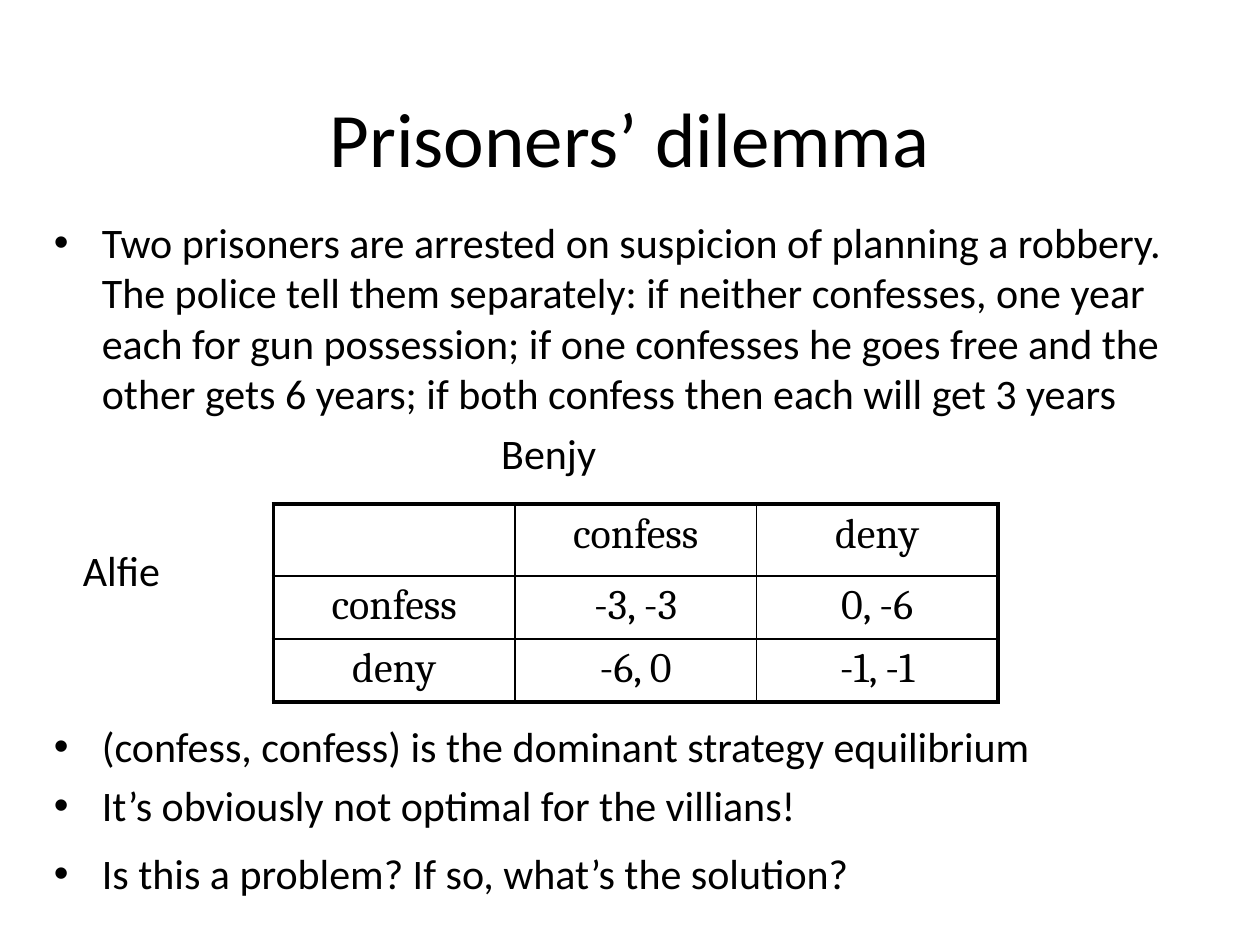
from lxml.etree import SubElement
from pptx import Presentation
from pptx.dml.color import RGBColor
from pptx.enum.text import MSO_ANCHOR, PP_ALIGN
from pptx.oxml.ns import qn
from pptx.util import Inches, Pt

BLACK, WHITE = "000000", "FFFFFF"
OUTER_BORDER, INNER_BORDER = 2.25, 1
TEXT_SIZE = 24

INTRODUCTION = [
    "Two prisoners are arrested on suspicion of planning a robbery. "
    "The police tell them separately: if neither confesses, one year "
    "each for gun possession; if one confesses he goes free and the "
    "other gets 6 years; if both confess then each will get 3 years",
]
CONCLUSIONS = [
    "(confess, confess) is the dominant strategy equilibrium",
    "It’s obviously not optimal for the villians!",
    "Is this a problem? If so, what’s the solution?",
]
PAYOFFS = [
    ["", "confess", "deny"],
    ["confess", "-3, -3", "0, -6"],
    ["deny", "-6, 0", "-1, -1"],
]


def color(hex_string):
    return RGBColor.from_string(hex_string)


def style_paragraph(paragraph, size=TEXT_SIZE, name="Calibri", align=PP_ALIGN.LEFT):
    paragraph.alignment = align
    paragraph.font.size = Pt(size)
    paragraph.font.name = name
    paragraph.font.color.rgb = color(BLACK)


def add_text(slide, lines, left, top, width, height, **style):
    shape = slide.shapes.add_textbox(
        Inches(left), Inches(top), Inches(width), Inches(height))
    frame = shape.text_frame
    frame.word_wrap = True
    frame.text = "\n".join(lines)
    for paragraph in frame.paragraphs:
        style_paragraph(paragraph, **style)
    return frame


def add_bullets(slide, lines, left, top, width, height):
    frame = add_text(slide, lines, left, top, width, height)
    for paragraph in frame.paragraphs:
        paragraph.space_before = Pt(4.8)
        properties = paragraph._p.get_or_add_pPr()
        properties.set("marL", str(Inches(0.38)))
        properties.set("indent", str(Inches(-0.38)))
        SubElement(properties, qn("a:buFont"), typeface="Arial")
        SubElement(properties, qn("a:buChar"), char="•")
    return frame


def set_borders(cell, widths):
    properties = cell._tc.get_or_add_tcPr()
    for side, width in zip("LRTB", widths):
        line = SubElement(properties, qn(f"a:ln{side}"), w=str(Pt(width)))
        fill = SubElement(line, qn("a:solidFill"))
        SubElement(fill, qn("a:srgbClr"), val=BLACK)


def add_payoff_table(slide, rows, left, top, width, row_heights):
    row_count, column_count = len(rows), len(rows[0])
    table = slide.shapes.add_table(
        row_count, column_count, Inches(left), Inches(top),
        Inches(width), Inches(sum(row_heights))).table
    table.first_row = table.horz_banding = False
    for row, height in zip(table.rows, row_heights):
        row.height = Inches(height)
    for i, values in enumerate(rows):
        for j, value in enumerate(values):
            cell = table.cell(i, j)
            cell.text = value
            style_paragraph(cell.text_frame.paragraphs[0],
                            name="Cambria", align=PP_ALIGN.CENTER)
            on_edge = (j == 0, j == column_count - 1, i == 0, i == row_count - 1)
            set_borders(cell, [OUTER_BORDER if edge else INNER_BORDER
                               for edge in on_edge])
            cell.fill.solid()
            cell.fill.fore_color.rgb = color(WHITE)


def main():
    presentation = Presentation()
    presentation.slide_width = Inches(10)
    presentation.slide_height = Inches(7.5)
    slide = presentation.slides.add_slide(presentation.slide_layouts[6])

    # Title
    title = add_text(slide, ["Prisoners’ dilemma"], 0.75, 0.67, 8.5, 0.83,
                     size=44, align=PP_ALIGN.CENTER)
    title.vertical_anchor = MSO_ANCHOR.MIDDLE

    # The story
    add_bullets(slide, INTRODUCTION, 0.33, 1.67, 9.25, 1.7)

    # Payoffs with the players' names
    add_text(slide, ["Benjy"], 3.88, 3.34, 1.5, 0.5)
    add_text(slide, ["Alfie"], 0.56, 4.27, 1.5, 0.5)
    add_payoff_table(slide, PAYOFFS, 2.17, 4, 5.75, [0.57, 0.5, 0.5])

    # Conclusions, the closing question set slightly apart
    conclusions = add_bullets(slide, CONCLUSIONS, 0.33, 5.67, 9.25, 1.58)
    conclusions.paragraphs[-1].space_before = Pt(10)

    presentation.save("out.pptx")


if __name__ == "__main__":
    main()
